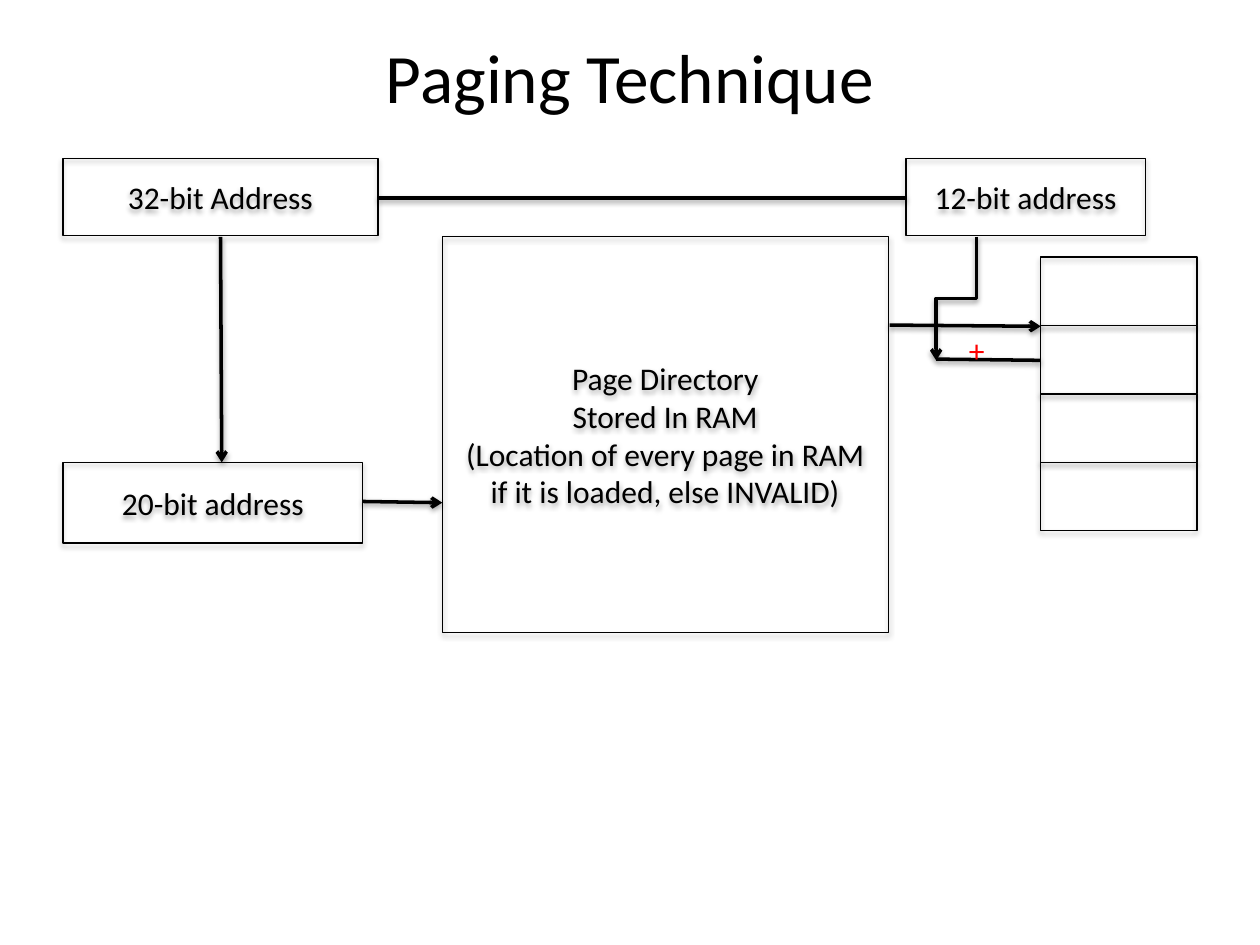
from lxml.etree import SubElement
from pptx import Presentation
from pptx.dml.color import RGBColor
from pptx.enum.shapes import MSO_CONNECTOR, MSO_SHAPE
from pptx.enum.text import MSO_ANCHOR, PP_ALIGN
from pptx.oxml.ns import qn
from pptx.util import Inches, Pt

BLACK = RGBColor(0x00, 0x00, 0x00)
RED = RGBColor(0xFF, 0x00, 0x00)
FONT = "Calibri"

# Content: left, top, width, height, paragraphs
TITLE = "Paging Technique"
BOXES = [
    (3.51, 1.88, 3.54, 3.14, ["Page Directory", "Stored In RAM",
     "(Location of every page in RAM if it is loaded, else INVALID)"]),
    (0.5, 1.26, 2.5, 0.61, ["32-bit Address"]),
    (0.5, 3.67, 2.38, 0.64, ["20-bit address"]),
    (7.19, 1.26, 1.9, 0.61, ["12-bit address"]),
]
PAGE_LEFT, PAGE_TOP, PAGE_W, PAGE_H = 8.26, 2.04, 1.24, 0.543
PAGE_ORDER = [0, 2, 1, 3]  # back to front

# Straight lines: from x, from y, to x, to y, arrowhead
LINES = [
    (1.75, 1.88, 1.76, 3.67, True),
    (2.88, 3.98, 3.51, 3.99, True),
    (7.06, 2.58, 8.26, 2.59, True),
    (3, 1.57, 7.19, 1.57, False),
    (7.43, 2.85, 8.26, 2.86, False),
]
# Elbow from the offset down to the sum, drawn flat and turned a quarter
ELBOW = (7.1, 2.21, 8.08, 2.53, True)


def add_run(p, text, size=18, color=BLACK):
    r = p.add_run()
    r.text = text
    r.font.name = FONT
    r.font.size = Pt(size)
    r.font.color.rgb = color


def add_shadow(sp, alpha, dist):
    effects = SubElement(sp._element.spPr, qn("a:effectLst"))
    shadow = SubElement(effects, qn("a:outerShdw"), blurRad=str(Pt(3.1)),
                        dist=str(Pt(dist)), dir="5400000", rotWithShape="0")
    color = SubElement(shadow, qn("a:srgbClr"), val=str(BLACK))
    SubElement(color, qn("a:alpha"), val=str(alpha * 1000))


def add_box(s, left, top, width, height, lines=()):
    sp = s.shapes.add_shape(MSO_SHAPE.RECTANGLE, Inches(left), Inches(top),
                            Inches(width), Inches(height))
    sp.fill.background()
    sp.line.color.rgb = BLACK
    sp.line.width = Pt(0.75)
    add_shadow(sp, 35, 1.8)
    tf = sp.text_frame
    tf.word_wrap = True
    tf.vertical_anchor = MSO_ANCHOR.MIDDLE
    for i, text in enumerate(lines):
        p = tf.add_paragraph() if i else tf.paragraphs[0]
        p.alignment = PP_ALIGN.CENTER
        add_run(p, text)


def add_line(s, x1, y1, x2, y2, arrow, kind=MSO_CONNECTOR.STRAIGHT):
    line = s.shapes.add_connector(kind, Inches(x1), Inches(y1),
                                  Inches(x2), Inches(y2))
    line.line.color.rgb = BLACK
    line.line.width = Pt(2)
    if arrow:
        SubElement(line._element.spPr.find(qn("a:ln")), qn("a:tailEnd"), type="arrow")
    add_shadow(line, 38, 1.6)
    return line


prs = Presentation()
prs.slide_width, prs.slide_height = Inches(10), Inches(7.5)
s = prs.slides.add_slide(prs.slide_layouts[5])

# Title
title = s.shapes.title
title.left, title.top = Inches(0.5), Inches(0.3)
title.width, title.height = Inches(9), Inches(0.61)
tf = title.text_frame
tf.vertical_anchor = MSO_ANCHOR.MIDDLE
tf.paragraphs[0].alignment = PP_ALIGN.CENTER
add_run(tf.paragraphs[0], TITLE, 39.6)

# Boxes and the stack of pages
for box in BOXES:
    add_box(s, *box)
for row in PAGE_ORDER:
    add_box(s, PAGE_LEFT, PAGE_TOP + row * PAGE_H, PAGE_W, PAGE_H)

# Connectors
for line in LINES:
    add_line(s, *line)
elbow = add_line(s, *ELBOW, kind=MSO_CONNECTOR.ELBOW)
elbow._element.spPr.find(qn("a:xfrm")).set("rot", "5400000")

# Plus sign
plus = s.shapes.add_textbox(Inches(7.59), Inches(2.58), Inches(0.31), Inches(0.4))
plus.text_frame.word_wrap = True
add_run(plus.text_frame.paragraphs[0], "+", color=RED)

prs.save("out.pptx")
